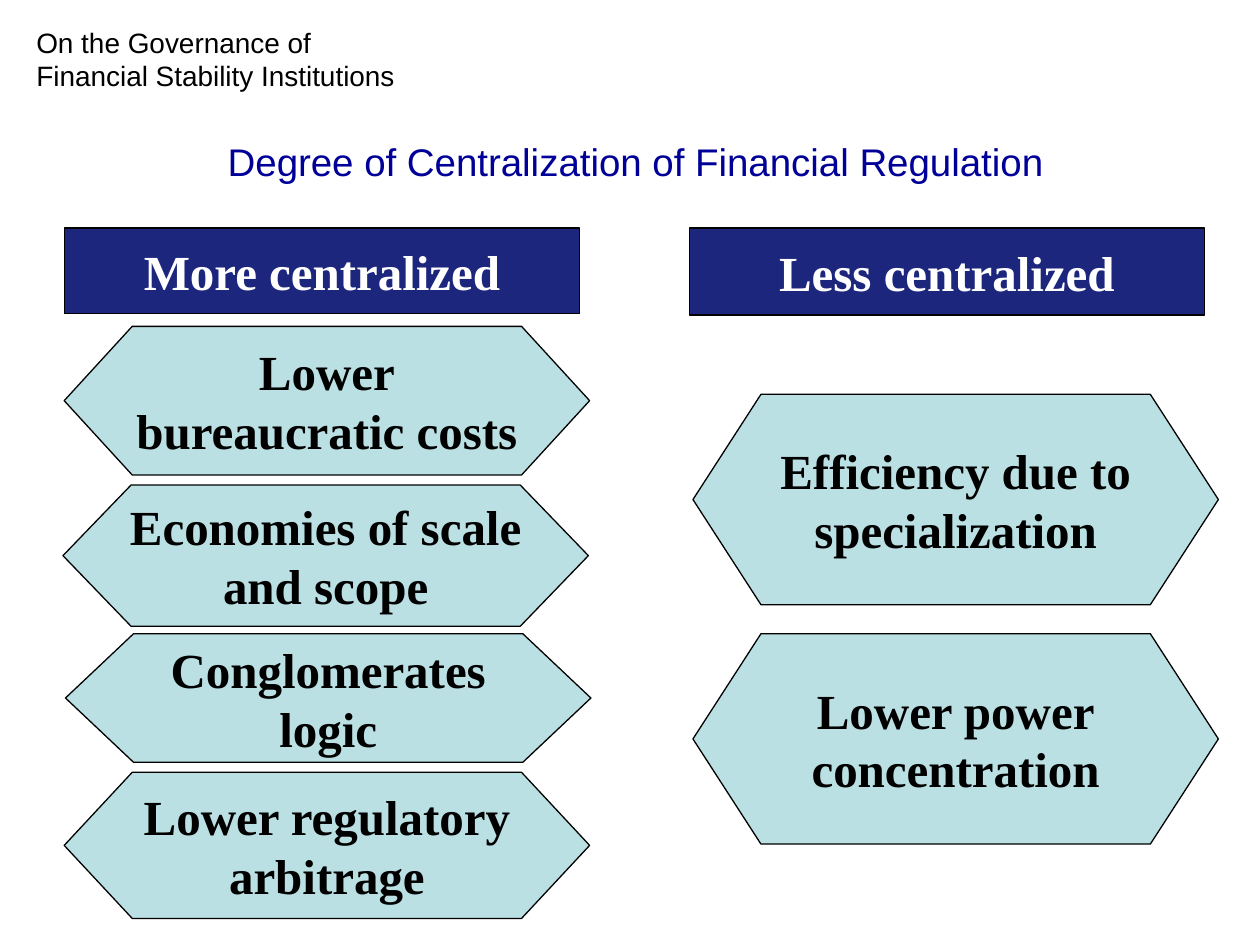
"""Build the slide comparing more and less centralized financial regulation."""
from pptx import Presentation
from pptx.dml.color import RGBColor
from pptx.enum.shapes import MSO_SHAPE
from pptx.enum.text import MSO_ANCHOR, PP_ALIGN
from pptx.util import Inches, Pt

RECT, HEXAGON = MSO_SHAPE.RECTANGLE, MSO_SHAPE.HEXAGON
TOP, MIDDLE, BOTTOM = MSO_ANCHOR.TOP, MSO_ANCHOR.MIDDLE, MSO_ANCHOR.BOTTOM
LEFT, CENTER = PP_ALIGN.LEFT, PP_ALIGN.CENTER

NAVY, AQUA, BLACK, WHITE, BLUE = "1C267D", "BBE0E3", "000000", "FFFFFF", "000099"
HEADER_W, ARGUMENT_W, POINT_W = 4.09, 4.17, 0.54

RUNNING_HEAD = "On the Governance of Financial Stability Institutions"
TITLE = "Degree of Centralization of Financial Regulation"
COLUMNS = [
    {"header": "More centralized", "at": (0.51, 1.81, HEADER_W, 0.68),
     "arguments": [
         (["Lower", "bureaucratic costs"], 0.51, 2.59, 1.18),
         (["Economies of scale", "and scope"], 0.5, 3.85, 1.12),
         (["Conglomerates", "logic"], 0.52, 5.03, 1.02),
         (["Lower regulatory", "arbitrage"], 0.51, 6.13, 1.16)]},
    {"header": "Less centralized", "at": (5.47, 1.81, HEADER_W, 0.69),
     "arguments": [
         (["Efficiency due to", "specialization"], 5.5, 3.13, 1.67),
         (["Lower power", "concentration"], 5.5, 5.03, 1.67)]},
]
SHAPE_FONT = {"name": "Times New Roman", "size": Pt(28), "bold": True}


def rgb(value):
    return RGBColor.from_string(value)


def write(sp, lines, color, font, align, **frame):
    tf = sp.text_frame
    for name, value in frame.items():
        setattr(tf, name, value)
    for i, line in enumerate(lines):
        p = tf.paragraphs[0] if i == 0 else tf.add_paragraph()
        p.alignment = align
        r = p.add_run()
        r.text = line
        r.font.color.rgb = rgb(color)
        for name, value in font.items():
            setattr(r.font, name, value)


def add_box(s, kind, at, lines, fill, color):
    sp = s.shapes.add_shape(kind, *map(Inches, at))
    sp.shadow.inherit = False
    sp.fill.solid()
    sp.fill.fore_color.rgb = rgb(fill)
    sp.line.color.rgb = rgb(BLACK)
    sp.line.width = Pt(0.75)
    write(sp, lines, color, SHAPE_FONT, CENTER, word_wrap=False, vertical_anchor=MIDDLE)
    return sp


def add_text(s, at, text, color, size, align, **frame):
    sp = s.shapes.add_textbox(*map(Inches, at))
    font = {"name": "Arial", "size": Pt(size)}
    write(sp, [text], color, font, align, word_wrap=True, **frame)


def main():
    prs = Presentation()
    prs.slide_width, prs.slide_height = Inches(10), Inches(7.5)
    s = prs.slides.add_slide(prs.slide_layouts[6])
    add_text(s, (0.19, 0.15, 3.27, 0.64), RUNNING_HEAD, BLACK, 16, LEFT,
             vertical_anchor=TOP)
    add_text(s, (0.42, 0.99, 9.25, 0.57), TITLE, BLUE, 22, CENTER,
             vertical_anchor=BOTTOM, margin_bottom=Inches(0.1))
    for column in COLUMNS:
        add_box(s, RECT, column["at"], [column["header"]], NAVY, WHITE)
        for lines, left, top, height in column["arguments"]:
            sp = add_box(s, HEXAGON, (left, top, ARGUMENT_W, height), lines, AQUA, BLACK)
            sp.adjustments[0] = POINT_W / height
    prs.save("out.pptx")


if __name__ == "__main__":
    main()
